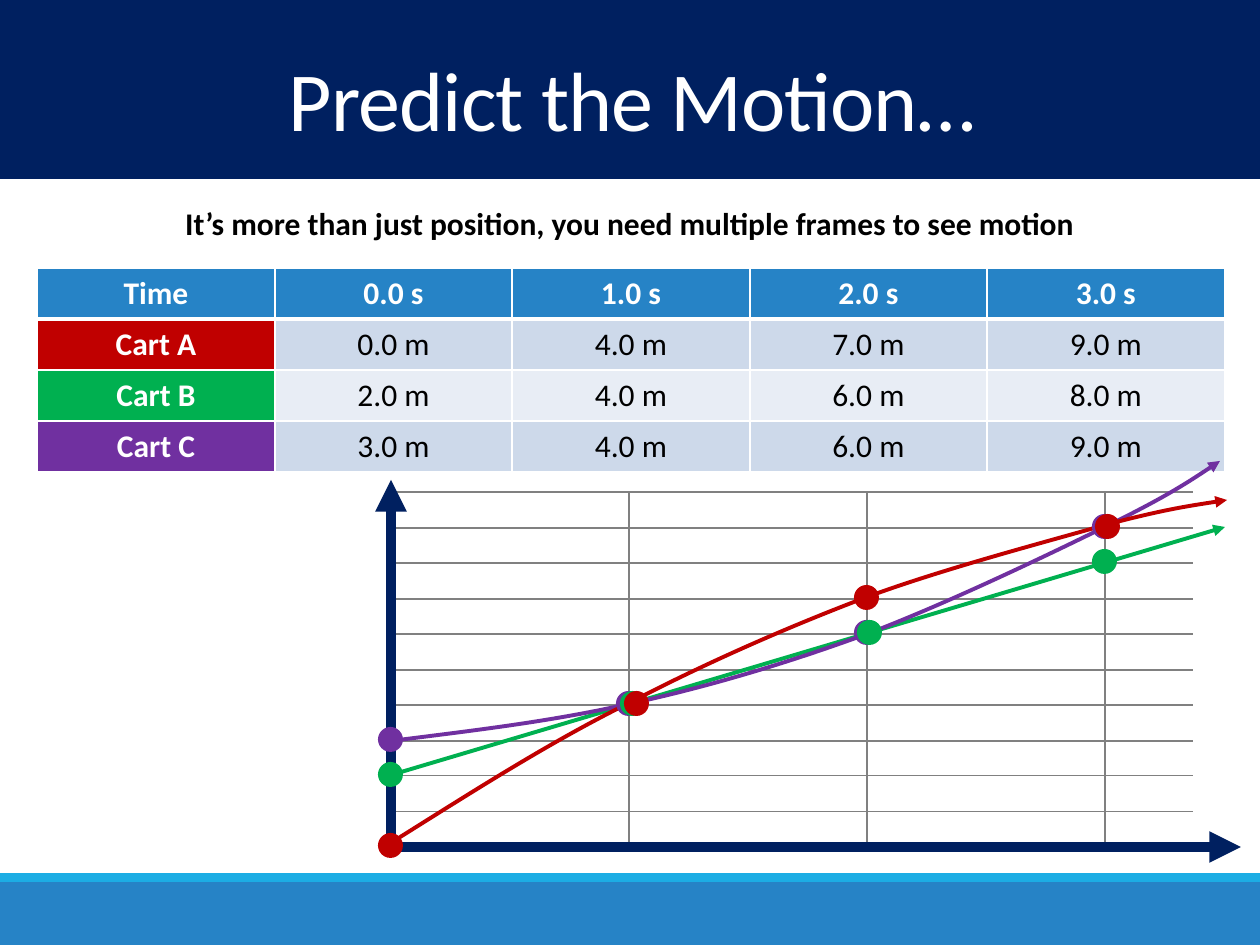
from lxml import etree
from pptx import Presentation
from pptx.dml.color import RGBColor
from pptx.enum.shapes import MSO_CONNECTOR, MSO_SHAPE
from pptx.enum.text import MSO_ANCHOR, MSO_AUTO_SIZE, PP_ALIGN
from pptx.oxml.ns import qn
from pptx.util import Pt

RECT, OVAL, STRAIGHT = MSO_SHAPE.RECTANGLE, MSO_SHAPE.OVAL, MSO_CONNECTOR.STRAIGHT
CENTER, MIDDLE = PP_ALIGN.CENTER, MSO_ANCHOR.MIDDLE
FIT_SHAPE = MSO_AUTO_SIZE.SHAPE_TO_FIT_TEXT
PX = 914400 / 126

THEME = {
    "font": "Calibri", "title": 48, "body": 18, "tiny": 1,
    "navy": "002060", "blue": "2683C6", "sky": "1CADE4", "grid": "808080",
    "white": "FFFFFF", "black": "000000", "bands": ("CDD9EA", "E8EDF5"),
    "red": "C00000", "green": "00B050", "purple": "7030A0",
}


def finish_line(shape, color, width):
    """Colour a line and give it an arrowhead and no shadow."""
    shape.line.color.rgb = RGBColor.from_string(color)
    shape.line.width = Pt(width)
    properties = shape.element.spPr
    etree.SubElement(properties.find(qn("a:ln")), qn("a:tailEnd"), type="triangle")
    if properties.find(qn("a:effectLst")) is None:
        etree.SubElement(properties, qn("a:effectLst"))


def set_borders(cell, color, widths):
    """Draw the L, R, T and B borders; a width of 0 leaves a side open."""
    tc_pr = cell._tc.get_or_add_tcPr()
    for side, width in zip("LRTB", widths):
        border = etree.SubElement(tc_pr, qn(f"a:ln{side}"), w=str(Pt(width)))
        if width:
            fill = etree.SubElement(border, qn("a:solidFill"))
            etree.SubElement(fill, qn("a:srgbClr"), val=color)
        else:
            etree.SubElement(border, qn("a:noFill"))


prs = Presentation()
prs.slide_width, prs.slide_height = round(1260 * PX), round(945 * PX)
slide = prs.slides.add_slide(prs.slide_layouts[6])
shapes = slide.shapes

# Footer bands and title band
for top, height, color in ((882, 63, "blue"), (873, 9, "sky"), (0, 179, "navy")):
    band = shapes.add_shape(RECT, 0, round(top * PX), round(1260 * PX), round(height * PX))
    band.shadow.inherit = False
    band.fill.solid()
    band.fill.fore_color.rgb = RGBColor.from_string(THEME[color])
    band.line.fill.background()

# Title and statement
headings = (
    ("Predict the Motion…", (4, 53, 1256, 106), "title", "white", False,
     {"word_wrap": True, "vertical_anchor": MIDDLE}, 0.85, "-50"),
    ("It’s more than just position, you need multiple frames to see motion",
     (152, 198, 956, 50), "body", "black", True,
     {"word_wrap": False, "auto_size": FIT_SHAPE}, 1.0, "0"),
)
for words, box, size, color, bold, frame_format, spacing, tracking in headings:
    frame = shapes.add_textbox(*(round(v * PX) for v in box)).text_frame
    for name, value in frame_format.items():
        setattr(frame, name, value)
    paragraph = frame.paragraphs[0]
    paragraph.alignment, paragraph.line_spacing = CENTER, spacing
    run = paragraph.add_run()
    run.text = words
    font_format = {"name": THEME["font"], "size": Pt(THEME[size]), "bold": bold}
    for name, value in font_format.items():
        setattr(run.font, name, value)
    run.font.color.rgb = RGBColor.from_string(THEME[color])
    run._r.get_or_add_rPr().set("spc", tracking)

# Position table
times = (0, 1, 2, 3)
carts = {
    "Cart A": ("red", (0, 4, 7, 9)),
    "Cart B": ("green", (2, 4, 6, 8)),
    "Cart C": ("purple", (3, 4, 6, 9)),
}
rows = [["Time"] + [f"{t:.1f} s" for t in times]]
rows += [[cart] + [f"{m:.1f} m" for m in metres] for cart, (_, metres) in carts.items()]
row_colors = ["blue"] + [color for color, _ in carts.values()]

positions = shapes.add_table(4, 5, round(37 * PX), round(268 * PX),
                             round(1188 * PX), round(204 * PX)).table
for column, width in zip(positions.columns, (238, 237, 238, 237, 238)):
    column.width = round(width * PX)
for r, words_in_row in enumerate(rows):
    positions.rows[r].height = round(51 * PX)
    for c, words in enumerate(words_in_row):
        cell = positions.cell(r, c)
        is_label = r == 0 or c == 0
        set_borders(cell, THEME["white"], (1, 1, 3 if r == 1 else 1, 3 if r == 0 else 1))
        cell.fill.solid()
        fill = THEME[row_colors[r]] if is_label else THEME["bands"][(r - 1) % 2]
        cell.fill.fore_color.rgb = RGBColor.from_string(fill)
        cell.vertical_anchor = MIDDLE
        paragraph = cell.text_frame.paragraphs[0]
        paragraph.alignment = CENTER
        run = paragraph.add_run()
        run.text = words
        font_format = {"name": THEME["font"], "size": Pt(THEME["body"]), "bold": is_label}
        for name, value in font_format.items():
            setattr(run.font, name, value)
        run.font.color.rgb = RGBColor.from_string(THEME["white" if is_label else "black"])

# Graph grid: one column per second, one row per metre
ORIGIN_X, ORIGIN_Y, SECOND = 391, 847, 238
grid = shapes.add_table(10, 4, round(ORIGIN_X * PX), round(492 * PX),
                        round(802 * PX), round(355 * PX)).table
grid.first_row = grid.horz_banding = False
for column, width in zip(grid.columns, (SECOND, SECOND, SECOND, 88)):
    column.width = round(width * PX)
for r, row in enumerate(grid.rows):
    row.height = round((36 - r % 2) * PX)
    for c, cell in enumerate(row.cells):
        set_borders(cell, THEME["grid"], (1, int(c < 3), 1, int(r < 9)))
        cell.fill.background()
        for margin in ("margin_left", "margin_right", "margin_top", "margin_bottom"):
            setattr(cell, margin, 0)
        etree.SubElement(cell.text_frame.paragraphs[0]._p, qn("a:endParaRPr"),
                         sz=str(THEME["tiny"] * 100))

# Axes and the straight path of Cart B
for start, end, color, width in (
    ((ORIGIN_X, ORIGIN_Y), (1241, ORIGIN_Y), "navy", 6),
    ((ORIGIN_X, 850), (ORIGIN_X, 480), "navy", 6),
    ((ORIGIN_X, 775), (1225, 527), "green", 2.25),
):
    line = shapes.add_connector(STRAIGHT, *(round(v * PX) for v in start + end))
    finish_line(line, THEME[color], width)

# Curved paths of Cart C and Cart A: a start, then three points per Bézier segment
curves = {
    "purple": ((391, 741), (470, 731), (549, 722), (629, 704), (708, 687), (788, 663),
               (867, 634), (946, 604), (1046, 556), (1105, 527), (1164, 498),
               (1192, 480), (1220, 461)),
    "red": ((389, 844), (469, 794), (548, 743), (629, 703), (708, 662), (788, 627),
            (867, 597), (946, 568), (1046, 542), (1105, 525), (1166, 509),
            (1196, 505), (1227, 500)),
}
for color, points in curves.items():
    builder = shapes.build_freeform(*points[0], scale=PX)
    builder.add_line_segments(points[1:], close=False)
    curve = builder.convert_to_shape()
    curve.fill.background()
    curve.shadow.inherit = False
    finish_line(curve, THEME[color], 2.25)
    outline = next(curve.element.iter(qn("a:path")))
    segments = outline.findall(qn("a:lnTo"))
    for i in range(0, len(segments), 3):
        bezier = etree.SubElement(outline, qn("a:cubicBezTo"))
        for segment in segments[i:i + 3]:
            bezier.append(segment[0])
            outline.remove(segment)

# Cart dots, nudged right where carts meet
DOT = 25
nudges = {"Cart C": (0, 0, 0, 0), "Cart B": (0, 4, 3, 0), "Cart A": (0, 8, 0, 3)}
for cart, cart_nudges in nudges.items():
    color, metres = carts[cart]
    for t, metre, nudge in zip(times, metres, cart_nudges):
        left = ORIGIN_X + SECOND * t + nudge - DOT // 2 - 1
        top = ORIGIN_Y - 2 - metre * 71 // 2 - DOT // 2
        dot = shapes.add_shape(OVAL, *(round(v * PX) for v in (left, top, DOT, DOT)))
        dot.shadow.inherit = False
        dot.fill.solid()
        dot.fill.fore_color.rgb = RGBColor.from_string(THEME[color])
        dot.line.fill.background()

prs.save("out.pptx")
